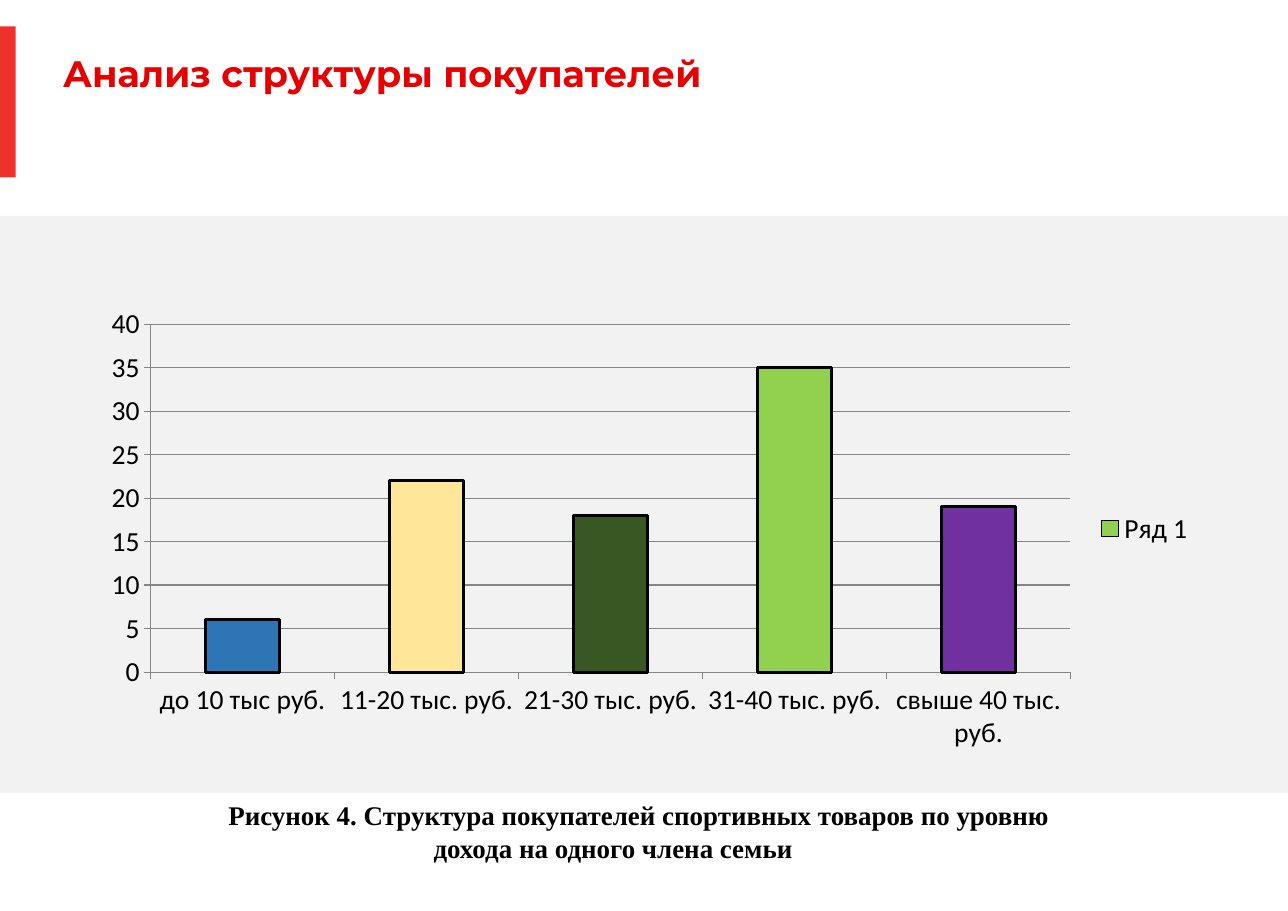
from pptx import Presentation
from pptx import util as u
from pptx.chart.data import CategoryChartData
from pptx.dml.color import RGBColor
from pptx.enum import chart as ch, shapes, text

# Content
TITLE = "Анализ структуры покупателей"
NOTE = ("Рисунок 4. Структура покупателей спортивных товаров "
        "по уровню дохода на одного члена семьи")
SERIES = "Ряд 1"
BARS = [  # income group, share, colour
    ("до 10 тыс руб.", 6, "2E75B6"),
    ("11-20 тыс. руб.", 22, "FFE699"),
    ("21-30 тыс. руб.", 18, "385723"),
    ("31-40 тыс. руб.", 35, "92D050"),
    ("свыше 40 тыс. руб.", 19, "7030A0"),
]
MAIN = "92D050"
BLACK, GRID = "000000", "868686"
PANELS = [  # left, top, width, height in cm, colour
    (0, 4.98, 29.69, 13.31, "F2F2F2"),
    (0, 0.61, 0.36, 3.48, "EE312C"),
]


def paint(part, tone):
    part.solid()
    part.fore_color.rgb = RGBColor.from_string(tone)


def place(*box):
    return [u.Cm(n) for n in box]


def style(font, name, size, tone, bold=False):
    font.name, font.size, font.bold = name, u.Pt(size), bold
    paint(font.fill, tone)


def write(box, words, name, size, tone):
    frame = slide.shapes.add_textbox(*place(*box)).text_frame
    frame.word_wrap = True
    par = frame.paragraphs[0]
    run = par.add_run()
    run.text = words
    style(run.font, name, size, tone, True)
    return frame, par


deck = Presentation()
deck.slide_width, deck.slide_height = place(29.69, 21.01)
slide = deck.slides.add_slide(deck.slide_layouts[6])

# Grey band and red mark
for *box, tone in PANELS:
    panel = slide.shapes.add_shape(shapes.MSO_SHAPE.RECTANGLE, *place(*box))
    panel.shadow.inherit = False
    paint(panel.fill, tone)
    panel.line.fill.background()

# Title
frame, par = write((1.45, 1.3, 25.37, 0.91), TITLE, "Montserrat", 24, "E60000")
frame.margin_left = frame.margin_right = 0
frame.margin_top = frame.margin_bottom = 0
frame.vertical_anchor = text.MSO_ANCHOR.MIDDLE
par.line_spacing = 0.9

# Chart
data = CategoryChartData()
data.categories = [name for name, _, _ in BARS]
data.add_series(SERIES, [share for _, share, _ in BARS])
chart = slide.shapes.add_chart(ch.XL_CHART_TYPE.COLUMN_CLUSTERED,
                               *place(2.06, 6.88, 25.73, 10.62), data).chart
chart.has_title = False
style(chart.font, "Calibri", 18, BLACK)
chart.has_legend = True
chart.legend.position = ch.XL_LEGEND_POSITION.RIGHT
chart.legend.include_in_layout = False

# Bars
plot = chart.plots[0]
plot.gap_width = 150
plot.vary_by_categories = False
row = plot.series[0]
paint(row.format.fill, MAIN)
looks = [row.format]
for i, (_, _, tone) in enumerate(BARS):
    if tone != MAIN:
        look = row.points[i].format
        paint(look.fill, tone)
        looks.append(look)
for look in looks:
    paint(look.line.fill, BLACK)
    look.line.width = u.Pt(2)

# Axes
axis = chart.value_axis
axis.minimum_scale, axis.maximum_scale, axis.major_unit = 0, 40, 5
axis.has_major_gridlines = True
for part in (axis, chart.category_axis):
    part.major_tick_mark = ch.XL_TICK_MARK.OUTSIDE
for part in (axis, chart.category_axis, axis.major_gridlines):
    paint(part.format.line.fill, GRID)
    part.format.line.width = u.Pt(0.75)

# Caption
_, par = write((3.2, 18.3, 21.87, 1.75), NOTE, "Times New Roman", 17.6, BLACK)
par.alignment = text.PP_ALIGN.CENTER
par._p.get_or_add_pPr().set("indent", str(u.Cm(1.19)))

deck.save("out.pptx")
